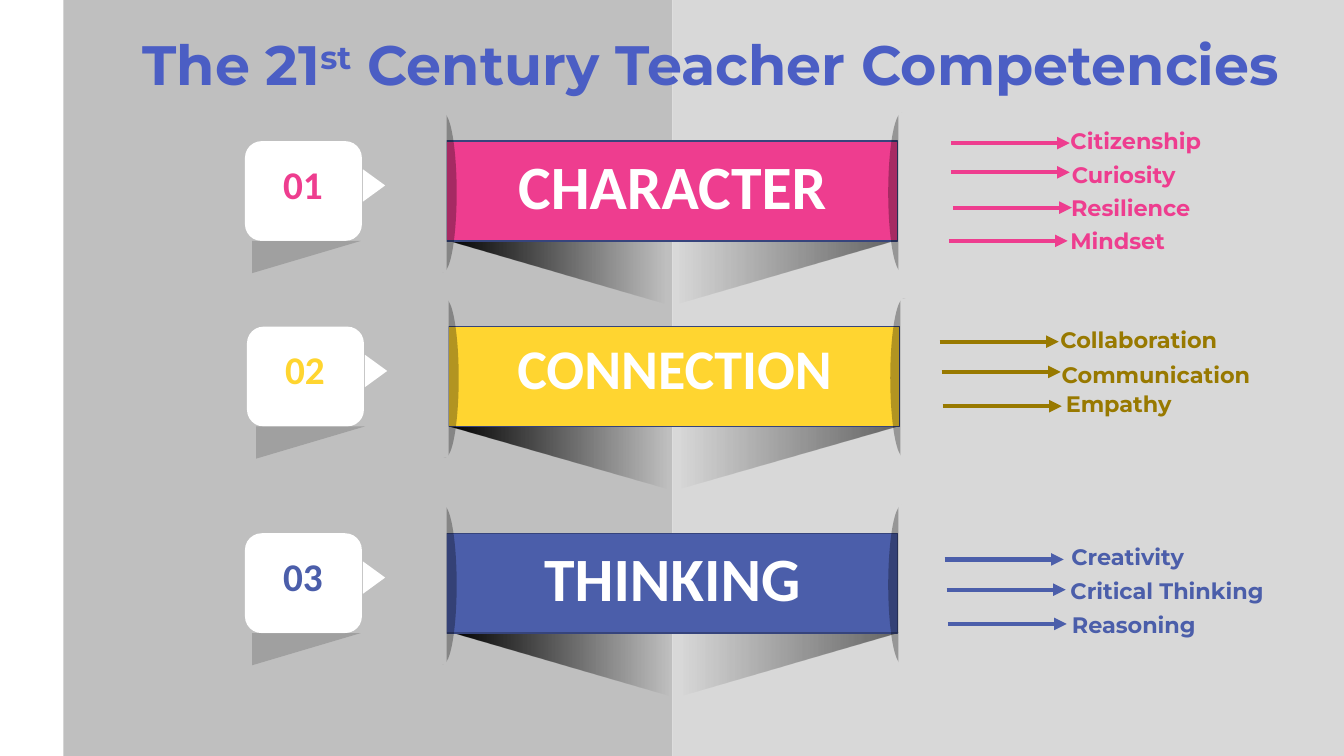
from lxml import etree
from pptx import Presentation
from pptx.dml import color
from pptx.enum import shapes, text
from pptx.oxml import ns
from pptx import util as u

PX = 9144
MSO = shapes.MSO_SHAPE
PINK, YELLOW, OLIVE, BLUE = "EE3D8F", "FFD530", "987900", "4B5EAA"
WHITE, BLACK, LEFT_GRAY, RIGHT_GRAY = "FFFFFF", "000000", "BFBFBF", "D8D8D8"

BANNERS = [
    ("01", "CHARACTER", 44, PINK, 0, 0, 443, 250),
    ("02", "CONNECTION", 40, YELLOW, 2, 184, 445, 254),
    ("03", "THINKING", 44, BLUE, 0, 389, 447, 250),
]

SKILLS = [
    (PINK, [
        ("Citizenship", 943, 142, 1031, 121, 191),
        ("Curiosity", 943, 171, 1019, 155, 191),
        ("Resilience", 945, 206, 1026, 188, 191),
        ("Mindset", 941, 239, 1013, 220, 191),
    ]),
    (OLIVE, [
        ("Collaboration", 932, 339, 1034, 319, 191),
        ("Communication", 934, 369, 1017, 353, 259),
        ("Empathy", 935, 403, 1014, 382, 191),
    ]),
    (BLUE, [
        ("Creativity", 937, 555, 1023, 534, 191),
        ("Critical Thinking", 939, 585, 1042, 568, 231),
        ("Reasoning", 940, 619, 1029, 601, 191),
    ]),
]


def rgb(value):
    return color.RGBColor.from_string(value)


def emu(*lengths):
    return [u.Emu(n * PX) for n in lengths]


def add_alpha(clr, percent):
    etree.SubElement(clr, ns.qn("a:alpha"), val=str(percent * 1000))


def add_block(s, kind, x, y, w, h, fill, alpha=100, line=None, rot=0, flip=False):
    sp = s.shapes.add_shape(kind, *emu(x, y, w, h))
    sp.shadow.inherit = False
    sp.rotation = rot
    if flip:
        sp._element.spPr.find(ns.qn("a:xfrm")).set("flipH", "1")
    sp.fill.solid()
    sp.fill.fore_color.rgb = rgb(fill)
    if alpha < 100:
        add_alpha(sp._element.spPr.find(".//" + ns.qn("a:srgbClr")), alpha)
    if line:
        sp.line.color.rgb = rgb(line)
        sp.line.width = u.Pt(1)
    else:
        sp.line.fill.background()
    return sp


def add_fade(s, x, y, strength, flip=False):
    sp = add_block(s, MSO.RIGHT_TRIANGLE, x, y, 223, 64, BLACK, rot=180, flip=flip)
    sp.fill.gradient()
    sp.fill.gradient_angle = 0
    stops = sp._element.spPr.find(".//" + ns.qn("a:gsLst"))
    for stop in list(stops):
        stops.remove(stop)
    for pos, alpha in ((0, 0), (3, 0), (100, strength)):
        gs = etree.SubElement(stops, ns.qn("a:gs"), pos=str(pos * 1000))
        add_alpha(etree.SubElement(gs, ns.qn("a:srgbClr"), val=BLACK), alpha)


def style_run(r, size, font, fill):
    r.font.size = u.Pt(size)
    r.font.name = font
    r.font.bold = True
    r.font.color.rgb = rgb(fill)


def add_label(s, words, x, y, w, h, size, font, fill, align=text.PP_ALIGN.CENTER):
    tf = s.shapes.add_textbox(*emu(x, y, w, h)).text_frame
    tf.word_wrap = True
    tf.text = words
    p = tf.paragraphs[0]
    p.alignment = align
    style_run(p.runs[0], size, font, fill)
    return tf


def add_arrow(s, x, y, fill):
    cn = s.shapes.add_connector(shapes.MSO_CONNECTOR.STRAIGHT, *emu(x, y, x + 118, y))
    cn.line.color.rgb = rgb(fill)
    cn.line.width = u.Pt(3)
    etree.SubElement(cn.line._get_or_add_ln(), ns.qn("a:tailEnd"), type="triangle")
    etree.SubElement(cn._element.spPr, ns.qn("a:effectLst"))


def add_banner(s, number, name, size, fill, dx, dy, fade_x, tag_shadow_x):
    add_fade(s, fade_x, 239 + dy, 100)
    add_fade(s, fade_x + 223, 239 + dy, 54, flip=True)
    add_block(s, MSO.RECTANGLE, 443 + dx, 140 + dy, 447, 99, fill, line="36447C")
    for edge_x, cover_x, cover_y, cover in (
        (426, 392, 103, LEFT_GRAY),
        (881, 891, 112, RIGHT_GRAY),
    ):
        add_block(s, MSO.OVAL, edge_x + dx, 112 + dy, 27, 158, BLACK, alpha=30)
        add_block(s, MSO.RECTANGLE, cover_x + dx, cover_y + dy, 51, 167, cover)
    add_label(s, name, 496 + dx, 142 + dy, 342, 84, size, "Calibri", WHITE)
    add_block(s, MSO.ISOSCELES_TRIANGLE, 355 + dx, 173 + dy, 32, 22, WHITE, rot=90)
    add_block(s, MSO.ROUNDED_RECTANGLE, 243 + dx, 140 + dy, 116, 99, WHITE)
    add_label(s, number, 271 + dx, 154 + dy, 71, 57, 28, "Calibri", fill,
              text.PP_ALIGN.LEFT)
    add_block(s, MSO.RIGHT_TRIANGLE, tag_shadow_x, 239 + dy, 108, 32, BLACK,
              alpha=16, rot=180, flip=True)


def add_title(s):
    style = 39.6, "Montserrat", "4B5EC4"
    tf = add_label(s, "The 21", 77, 6, 1256, 123, *style)
    tf.vertical_anchor = text.MSO_ANCHOR.MIDDLE
    p = tf.paragraphs[0]
    p.line_spacing = 0.9
    for words, baseline in (("st", 30000), (" Century Teacher Competencies", 0)):
        r = p.add_run()
        r.text = words
        style_run(r, *style)
        r.font._element.set("baseline", str(baseline))


def main():
    prs = Presentation()
    prs.slide_width, prs.slide_height = emu(1333, 750)
    s = prs.slides.add_slide(prs.slide_layouts[6])
    add_block(s, MSO.RECTANGLE, 63, 0, 604, 750, LEFT_GRAY)
    add_block(s, MSO.RECTANGLE, 667, 0, 666, 750, RIGHT_GRAY)
    for banner in BANNERS:
        add_banner(s, *banner)
    add_title(s)
    for fill, skills in SKILLS:
        for name, arrow_x, arrow_y, x, y, w in skills:
            add_arrow(s, arrow_x, arrow_y, fill)
            add_label(s, name, x, y, w, 37, 16, "Montserrat", fill)
    prs.save("out.pptx")


if __name__ == "__main__":
    main()
